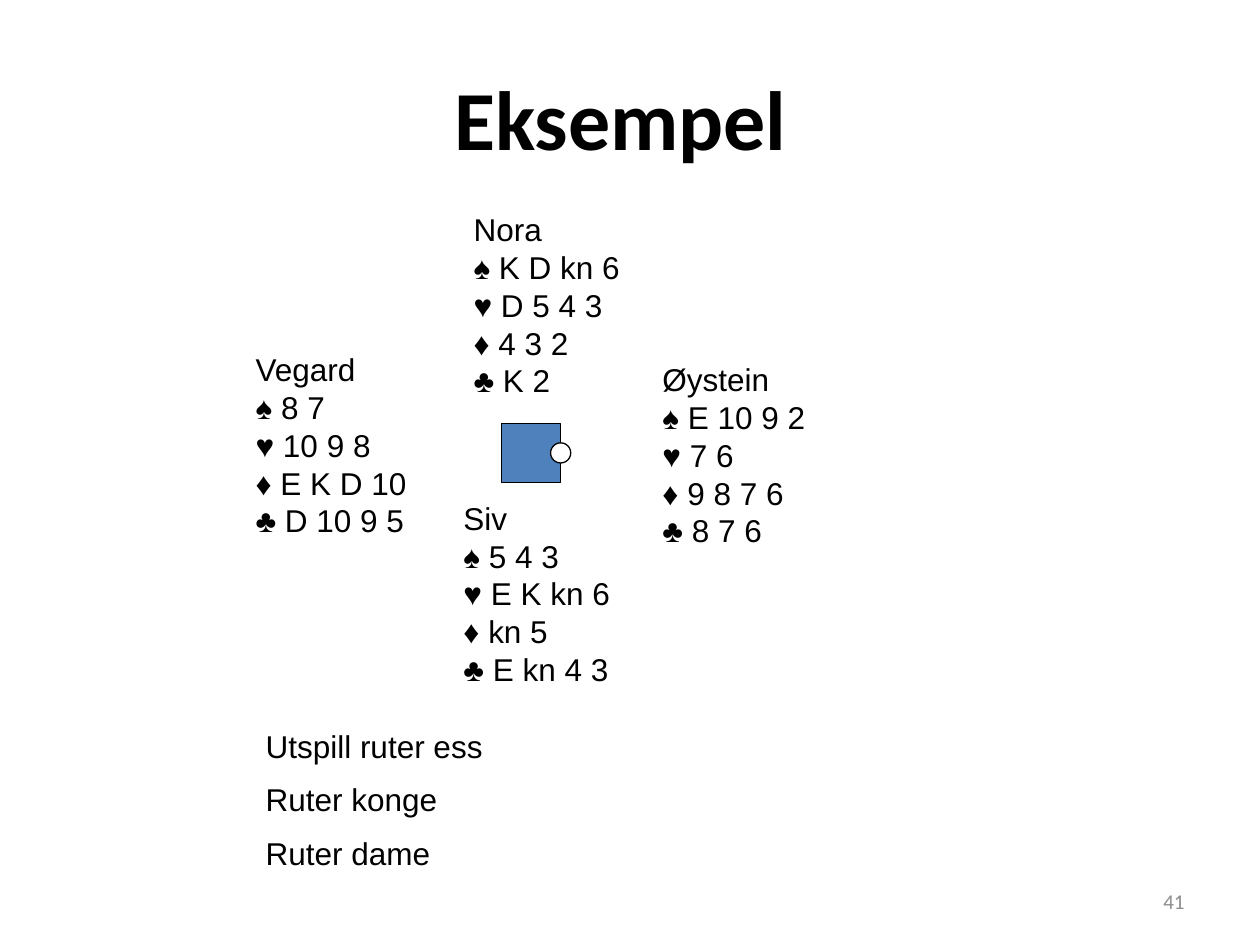
import pptx
import pptx.dml.color
import pptx.enum.shapes
import pptx.enum.text
import pptx.oxml
import pptx.oxml.ns
import pptx.util
from pptx.util import Inches

ALIGN = pptx.enum.text.PP_ALIGN
ANCHOR = pptx.enum.text.MSO_ANCHOR
SHAPE = pptx.enum.shapes.MSO_SHAPE
SUITS = "♠♥♦♣"
HAND_HEIGHT = 1.6
HANDS = [
    ("Nora", (3.66, 1.62, 1.65), ["K D kn 6", "D 5 4 3", "4 3 2", "K 2"]),
    ("Øystein", (5.16, 2.81, 1.5), ["E 10 9 2", "7 6", "9 8 7 6", "8 7 6"]),
    ("Siv", (3.58, 3.91, 1.89), ["5 4 3", "E K kn 6", "kn 5", "E kn 4 3"]),
    ("Vegard", (1.93, 2.73, 1.58), ["8 7", "10 9 8", "E K D 10", "D 10 9 5"]),
]
PLAYS = ["Utspill ruter ess", "Ruter konge", "Ruter dame"]


def rgb(value):
    return pptx.dml.color.RGBColor.from_string(value)


def write(frame, lines, size=18, font="Arial", color="000000", bold=False,
          align=ALIGN.LEFT, anchor=ANCHOR.TOP, gap=0):
    frame.word_wrap = True
    frame.vertical_anchor = anchor
    for index, line in enumerate(lines):
        paragraph = frame.add_paragraph() if index else frame.paragraphs[0]
        paragraph.text = line
        paragraph.alignment = align
        paragraph.space_before = pptx.util.Pt(gap if index else 0)
        paragraph.font.size = pptx.util.Pt(size)
        paragraph.font.name = font
        paragraph.font.bold = bold
        paragraph.font.color.rgb = rgb(color)


def add_block(slide, kind, box, fill, outline=None):
    block = slide.shapes.add_shape(kind, *map(Inches, box))
    block.shadow.inherit = False
    block.fill.solid()
    block.fill.fore_color.rgb = rgb(fill)
    if outline:
        block.line.color.rgb = rgb(outline)
        block.line.width = pptx.util.Pt(0.75)
    else:
        block.line.fill.background()
    return block


def add_title(slide, box, text):
    title = slide.shapes.title
    title.left, title.top, title.width, title.height = map(Inches, box)
    write(title.text_frame, [text], size=48, font="Calibri", bold=True,
          align=ALIGN.CENTER, anchor=ANCHOR.MIDDLE)


def add_hand(slide, box, player, holdings):
    hand = slide.shapes.add_textbox(*map(Inches, box))
    cards = [f"{suit} {holding}" for suit, holding in zip(SUITS, holdings)]
    write(hand.text_frame, [player] + cards)


def add_plays(slide, box, plays):
    panel = add_block(slide, SHAPE.RECTANGLE, box, "FFFFFF")
    fill_color = panel.fill._xPr.find(".//" + pptx.oxml.ns.qn("a:srgbClr"))
    fill_color.append(pptx.oxml.parse_xml(
        f'<a:alpha {pptx.oxml.ns.nsdecls("a")} val="60000"/>'))
    write(panel.text_frame, plays, gap=9)


def add_page_number(slide, box, number):
    page_number = slide.shapes.add_textbox(*map(Inches, box))
    write(page_number.text_frame, [number], size=12, font="Calibri",
          color="8C8C8C", align=ALIGN.RIGHT, anchor=ANCHOR.MIDDLE)


def add_table_marker(slide, box, marker_size=0.16):
    left, top, width, height = box
    add_block(slide, SHAPE.RECTANGLE, box, "4F81BD", "000000")
    marker_box = (left + width - marker_size / 2,
                  top + (height - marker_size) / 2, marker_size, marker_size)
    add_block(slide, SHAPE.OVAL, marker_box, "FFFFFF", "000000")


def main():
    deck = pptx.Presentation()
    deck.slide_width, deck.slide_height = Inches(10), Inches(7.5)
    slide = deck.slides.add_slide(deck.slide_layouts[5])
    add_title(slide, (0.5, 0.3, 9, 1.25), "Eksempel ")
    for player, place, holdings in HANDS:
        add_hand(slide, (*place, HAND_HEIGHT), player, holdings)
    add_plays(slide, (2.01, 5.72, 5.43, 1.3), PLAYS)
    add_page_number(slide, (7.17, 6.95, 2.33, 0.4), "41")
    add_table_marker(slide, (3.98, 3.36, 0.47, 0.47))
    deck.save("out.pptx")


if __name__ == "__main__":
    main()
